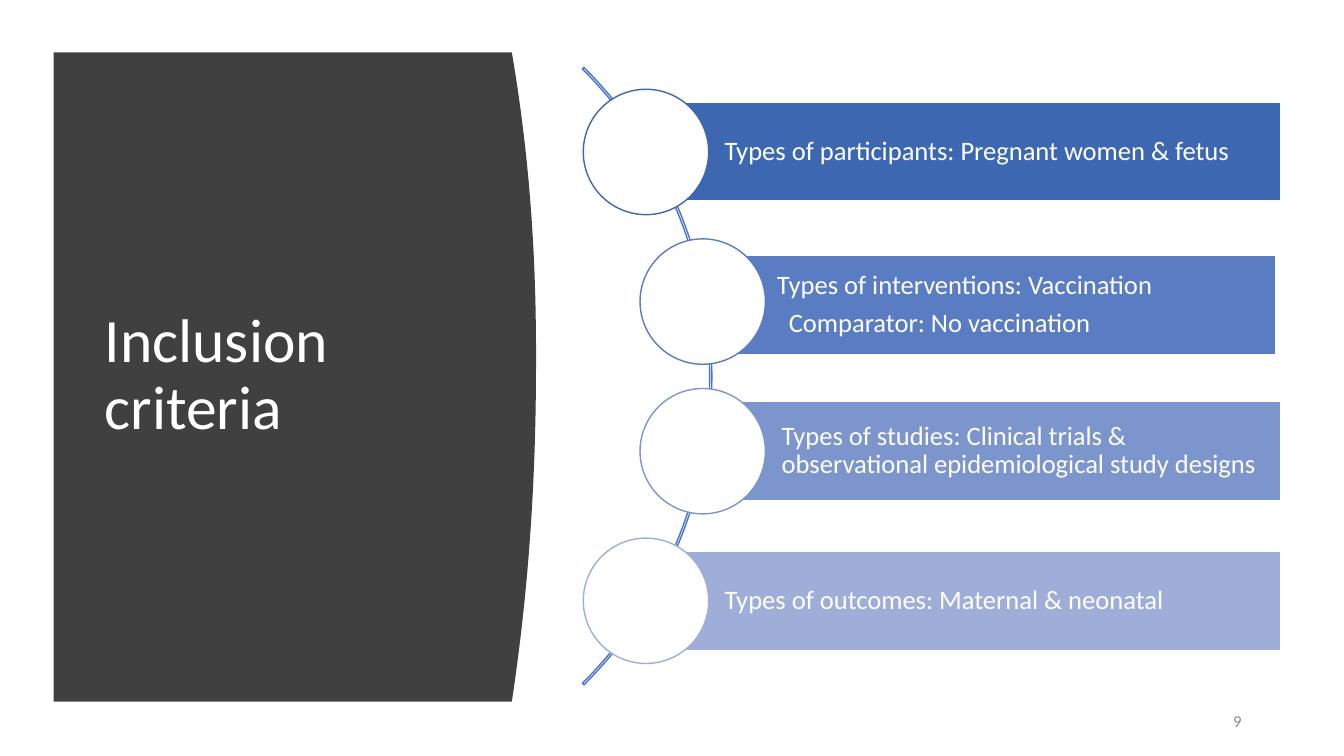
"""Build the inclusion criteria slide: a curved title panel and four bars along an arc."""
from pptx import Presentation
from pptx.dml.color import RGBColor
from pptx.enum.shapes import MSO_SHAPE as Preset
from pptx.enum.text import MSO_ANCHOR as Anchor, PP_ALIGN as Align
from pptx.util import Cm, Pt

WHITE = RGBColor(0xFF, 0xFF, 0xFF)
CHARCOAL = RGBColor(0x40, 0x40, 0x40)
GREY = RGBColor(0x8C, 0x8C, 0x8C)
ARC_BLUE = RGBColor(0x4A, 0x75, 0xC5)
BLUE_1 = RGBColor(0x3E, 0x67, 0xB2)
BLUE_2 = RGBColor(0x5A, 0x7C, 0xC3)
BLUE_3 = RGBColor(0x7D, 0x95, 0xCD)
BLUE_4 = RGBColor(0x9F, 0xAE, 0xD8)

CIRCLE_SIZE, CIRCLE_TOP, CIRCLE_STEP = 3.16, 2.25, 3.77
BAR_HEIGHT = 2.5
CRITERIA = [
    (BLUE_1, 14.7, 16.26, 2.57, 16.02, ["Types of participants: Pregnant women & fetus"]),
    (BLUE_2, 16.13, 17.58, 6.43, 14.58,
     ["Types of interventions: Vaccination", "Comparator: No vaccination"]),
    (BLUE_3, 16.13, 17.7, 10.11, 14.58,
     ["Types of studies: Clinical trials & observational epidemiological study designs"]),
    (BLUE_4, 14.7, 16.26, 13.89, 16.02, ["Types of outcomes: Maternal & neonatal"]),
]


def apply_format(target, values):
    for name, value in values.items():
        setattr(target, name, value)


class SlideBuilder:
    font_name = "Calibri"

    def __init__(self, slide):
        self.slide = slide

    def paint(self, shape, fill=None, line=None):
        shape.shadow.inherit = False
        for part, color in ((shape.fill, fill), (shape.line.fill, line)):
            if color is None:
                part.background()
            else:
                part.solid()
                part.fore_color.rgb = color
        if line is not None:
            shape.line.width = Pt(1)

    def add_preset(self, preset, box, fill=None, line=None):
        shape = self.slide.shapes.add_shape(preset, *map(Cm, box))
        self.paint(shape, fill, line)
        return shape

    def add_panel(self, left, top, right, bottom, bulge, middle):
        outline = [(left, top)]
        for step in range(61):
            y = top + (bottom - top) * step / 60
            reach = middle - top if y < middle else bottom - middle
            outline.append((right + bulge * (1 - (abs(y - middle) / reach) ** 2.15), y))
        outline.append((left, bottom))
        points = [(Cm(x), Cm(y)) for x, y in outline]
        builder = self.slide.shapes.build_freeform(*points[0])
        builder.add_line_segments(points[1:], close=True)
        self.paint(builder.convert_to_shape(), CHARCOAL)

    def add_arc(self, box):
        arc = self.add_preset(Preset.BLOCK_ARC, box, line=ARC_BLUE)
        for index, value in enumerate((189, 27, 0.0025)):
            arc.adjustments[index] = value

    def set_text(self, shape, lines, size, color=WHITE, indent=0, frame=None, layout=None):
        text_frame = shape.text_frame
        apply_format(text_frame, {"word_wrap": True, "vertical_anchor": Anchor.MIDDLE,
                                  **(frame or {})})
        for index, text in enumerate(lines):
            paragraph = text_frame.add_paragraph() if index else text_frame.paragraphs[0]
            apply_format(paragraph, {"alignment": Align.LEFT, **(layout or {})})
            if index and indent:
                paragraph._p.get_or_add_pPr().set("marL", str(Cm(indent)))
            run = paragraph.add_run()
            run.text = text
            apply_format(run.font, {"name": self.font_name, "size": Pt(size)})
            run.font.color.rgb = color

    def add_text(self, box, text, size, color=WHITE, **layout):
        shape = self.slide.shapes.add_textbox(*map(Cm, box))
        self.set_text(shape, [text], size, color, layout=layout)

    def add_bar(self, box, color, lines):
        bar = self.add_preset(Preset.RECTANGLE, box, color, WHITE)
        inset = Cm(0.13)
        self.set_text(bar, lines, 19, indent=0.3,
                      frame={"margin_left": Cm(2), "margin_right": inset,
                             "margin_top": inset, "margin_bottom": inset},
                      layout={"line_spacing": 0.9, "space_after": Pt(7)})

    def add_circle(self, left, top, color):
        box = (left, top, CIRCLE_SIZE, CIRCLE_SIZE)
        self.add_preset(Preset.OVAL, box, WHITE, color)


def main():
    presentation = Presentation()
    apply_format(presentation, {"slide_width": Cm(33.87), "slide_height": Cm(19.05)})
    builder = SlideBuilder(presentation.slides.add_slide(presentation.slide_layouts[6]))
    builder.add_panel(1.35, 1.32, 12.9, 17.68, 0.61, 9)
    builder.add_text((2.39, 2.82, 9.5, 13.31), "Inclusion criteria", 44, line_spacing=0.9)
    builder.add_arc((-4.06, -1.52, 22, 22))
    for index, (color, circle_left, left, top, width, lines) in enumerate(CRITERIA):
        builder.add_bar((left, top, width, BAR_HEIGHT), color, lines)
        builder.add_circle(circle_left, CIRCLE_TOP + index * CIRCLE_STEP, color)
    builder.add_text((23.92, 17.66, 7.62, 1.01), "9", 12, GREY, alignment=Align.RIGHT)
    presentation.save("out.pptx")


if __name__ == "__main__":
    main()
